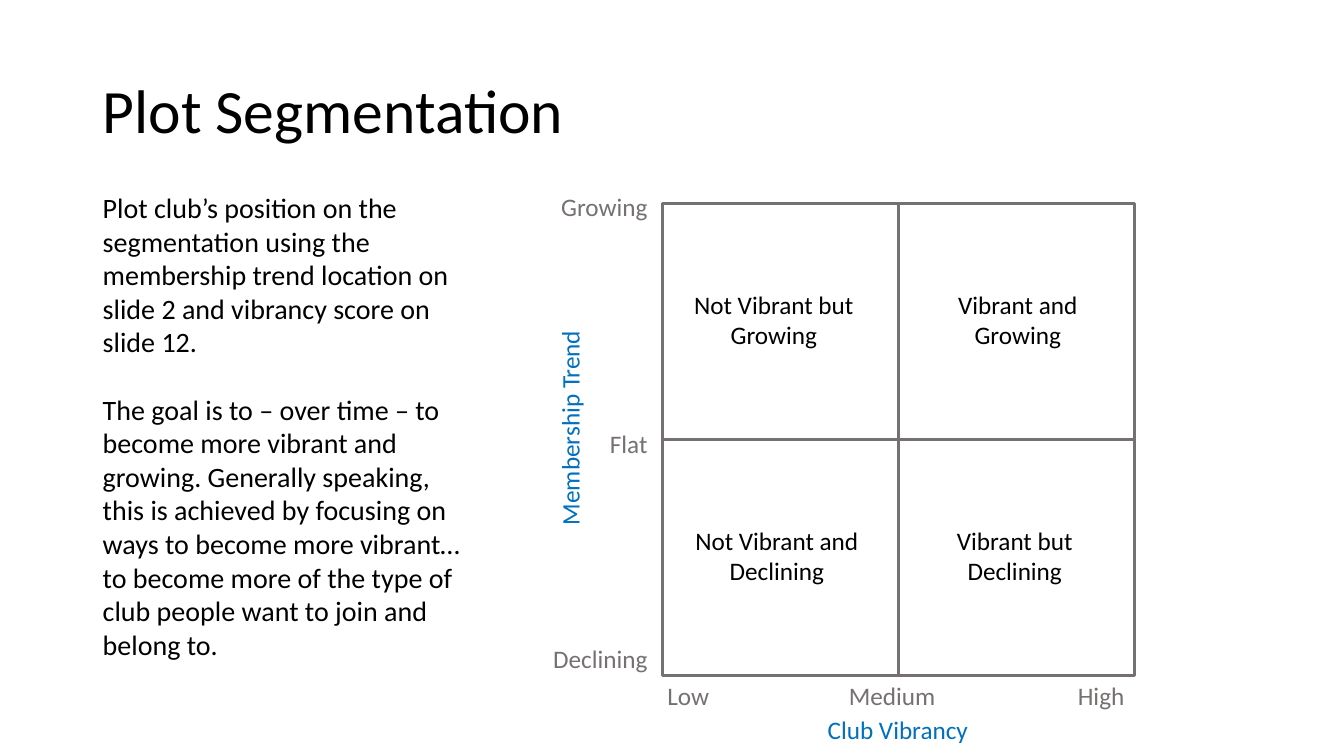
import pptx
import pptx.dml.color
import pptx.enum.shapes
import pptx.enum.text
import pptx.util

Inches, Pt = pptx.util.Inches, pptx.util.Pt
ALIGN = pptx.enum.text.PP_ALIGN
ANCHOR = pptx.enum.text.MSO_ANCHOR

FONT = "Calibri"
BLACK, GRAY, BLUE = "000000", "767171", "0070C0"

TITLE = "Plot Segmentation"
BODY = [
    "Plot club’s position on the segmentation using the membership trend "
    "location on slide 2 and vibrancy score on slide 12.",
    "The goal is to – over time – to become more vibrant and growing. "
    "Generally speaking, this is achieved by focusing on ways to become more "
    "vibrant…to become more of the type of club people want to join and belong to.",
]

# (column, row, text left, text)
QUADRANTS = [
    (0, 0, 6.74, "Not Vibrant but Growing"),
    (1, 0, 9.16, "Vibrant and Growing"),
    (0, 1, 6.77, "Not Vibrant and Declining"),
    (1, 1, 9.13, "Vibrant but Declining"),
]
TREND_TICKS = [("Growing", 1.85), ("Flat", 4.2), ("Declining", 6.33)]
VIBRANCY_TICKS = [("Low", 6.52, ALIGN.LEFT), ("Medium", 8.32, ALIGN.LEFT),
                  ("High", 10.06, ALIGN.RIGHT)]
# (text, left, top, rotation)
AXIS_TITLES = [("Club Vibrancy", 7.1, 7.04, 0),
               ("Membership Trend", 3.83, 4.06, 270)]

GRID_LEFT, GRID_TOP, CELL = 6.57, 2.02, 2.34
TICK_W, AXIS_W, LABEL_H = 1.19, 3.61, 0.37
QUAD_W, QUAD_H, QUAD_DROP = 1.87, 0.64, 0.83


def rgb(color):
    return pptx.dml.color.RGBColor.from_string(color)


def format_runs(p, size, color):
    for r in p.runs:
        r.font.name = FONT
        r.font.size = Pt(size)
        r.font.color.rgb = rgb(color)


def add_text(slide, paragraphs, left, top, width, height, size=18, color=BLACK,
             align=ALIGN.LEFT, anchor=ANCHOR.TOP, gap=0):
    """Add a wrapped text box; gap is the space in points between paragraphs."""
    sp = slide.shapes.add_textbox(Inches(left), Inches(top),
                                  Inches(width), Inches(height))
    tf = sp.text_frame
    tf.text = "\n".join(paragraphs)
    tf.word_wrap = True
    tf.auto_size = pptx.enum.text.MSO_AUTO_SIZE.SHAPE_TO_FIT_TEXT
    tf.vertical_anchor = anchor
    for i, p in enumerate(tf.paragraphs):
        p.alignment = align
        if i and gap:
            p.space_before = Pt(gap)
        format_runs(p, size, color)
    return sp


def add_title(slide):
    sp = slide.shapes.title
    sp.left, sp.top = Inches(0.92), Inches(0.4)
    sp.width, sp.height = Inches(11.5), Inches(1.45)
    tf = sp.text_frame
    tf.text = TITLE
    tf.vertical_anchor = ANCHOR.MIDDLE
    p = tf.paragraphs[0]
    p.alignment = ALIGN.LEFT
    p.line_spacing = 0.9
    format_runs(p, 44, BLACK)


def add_matrix(slide):
    for col, row, _, _ in QUADRANTS:
        sp = slide.shapes.add_shape(
            pptx.enum.shapes.MSO_SHAPE.RECTANGLE,
            Inches(GRID_LEFT + col * CELL), Inches(GRID_TOP + row * CELL),
            Inches(CELL), Inches(CELL))
        sp.shadow.inherit = False
        sp.fill.background()
        sp.line.color.rgb = rgb(GRAY)
        sp.line.width = Pt(2.25)
    for _, row, left, text in QUADRANTS:
        add_text(slide, [text], left, GRID_TOP + row * CELL + QUAD_DROP,
                 QUAD_W, QUAD_H, align=ALIGN.CENTER, anchor=ANCHOR.MIDDLE)


def add_axes(slide):
    for text, top in TREND_TICKS:
        add_text(slide, [text], 5.33, top, TICK_W, LABEL_H,
                 color=GRAY, align=ALIGN.RIGHT)
    for text, left, align in VIBRANCY_TICKS:
        add_text(slide, [text], left, GRID_TOP + 2 * CELL, TICK_W, LABEL_H,
                 color=GRAY, align=align)
    for text, left, top, rotation in AXIS_TITLES:
        sp = add_text(slide, [text], left, top, AXIS_W, LABEL_H,
                      color=BLUE, align=ALIGN.CENTER)
        sp.rotation = rotation


def main():
    prs = pptx.Presentation()
    prs.slide_width, prs.slide_height = Inches(13.33), Inches(7.5)
    slide = prs.slides.add_slide(prs.slide_layouts.get_by_name("Title Only"))
    add_title(slide)
    add_matrix(slide)
    add_axes(slide)
    add_text(slide, BODY, 0.92, 1.84, 3.88, 4.81, size=20, gap=24)
    prs.save("out.pptx")


if __name__ == "__main__":
    main()
